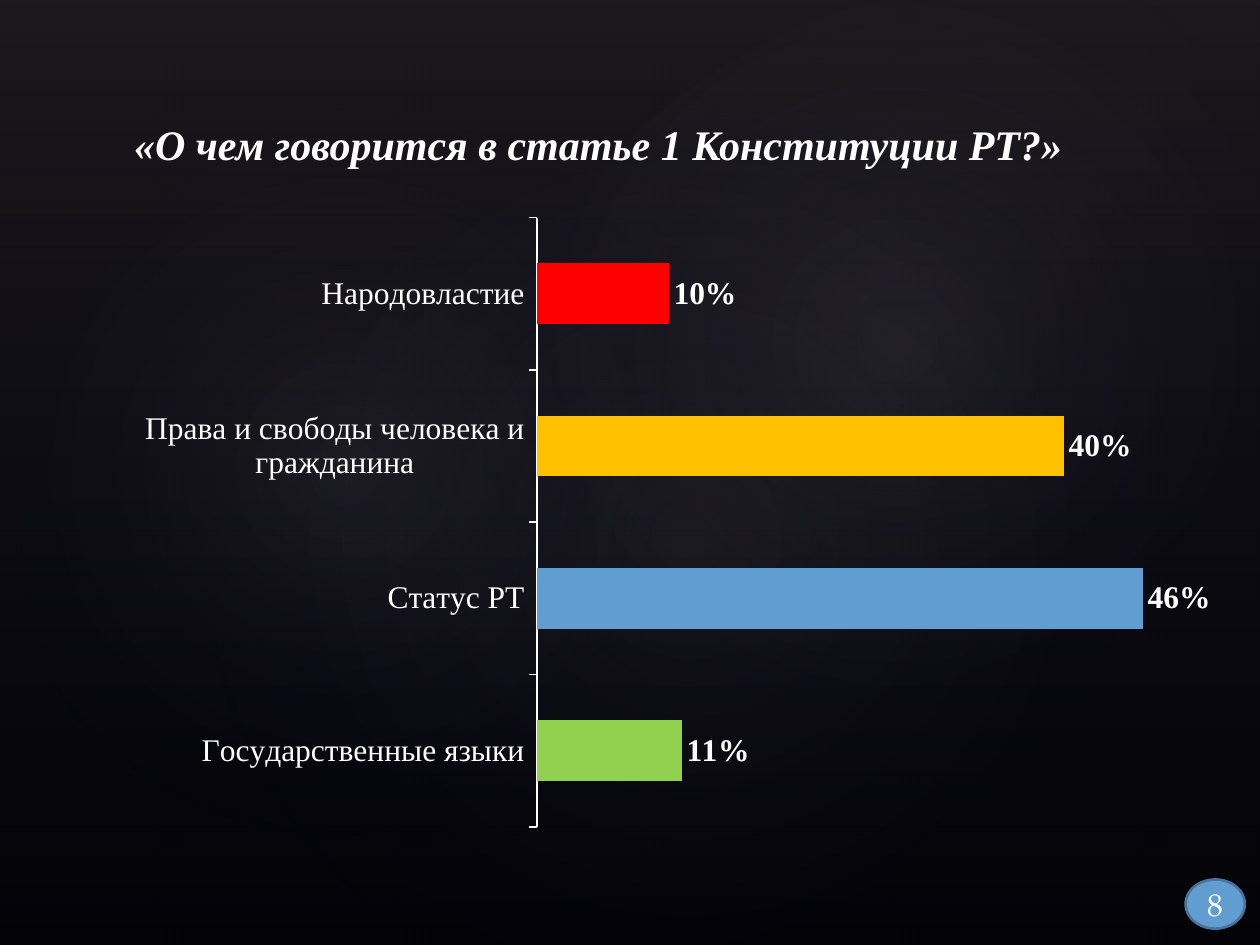
from lxml import etree
from pptx import Presentation
from pptx.chart.data import CategoryChartData
from pptx.dml.color import RGBColor
from pptx.enum.chart import XL_CHART_TYPE, XL_LABEL_POSITION, XL_TICK_MARK
from pptx.enum.shapes import MSO_SHAPE
from pptx.enum.text import MSO_ANCHOR, PP_ALIGN
from pptx.oxml import parse_xml
from pptx.oxml.ns import nsdecls, qn
from pptx.util import Inches, Pt

TITLE = "«О чем говорится в статье 1 Конституции РТ?» "
PAGE_NUMBER = "8"
ANSWERS = [
    ("Народовластие", 0.10, "FF0000"),
    ("Права и свободы человека и гражданина", 0.40, "FFC000"),
    ("Статус РТ", 0.46, "629DD1"),
    ("Государственные языки", 0.11, "92D050"),
]
GLOWS = [
    ((1.5, 1.14, 7.92, 6.24), 328.7, 7),
    ((-0.3, 1.28, 6.06, 4.9), 294.3, 8),
    ((3.58, 0.13, 7.09, 5.2), 328.7, 8),
]
PLOT_AREA = {"x": 0.4, "y": 0, "w": 0.587, "h": 0.953}
THEME = {
    "background": "000000", "text": "FFFFFF", "accent": "629DD1", "badge_line": "49749B",
    "veil_top": "504652", "veil_bottom": "242852", "glow": "C4BCC6",
    "heading_font": "Times New Roman", "body_font": "TeX Gyre Pagella",
    "title_size": 24, "label_size": 18, "chart_size": 10,
}


def rgb(name):
    return RGBColor.from_string(THEME[name])


def style_font(font, family, size, bold=False, italic=False):
    font.name = THEME[family]
    font.size = Pt(THEME[size])
    font.bold = bold
    font.italic = italic
    font.color.rgb = rgb("text")


def add_plain_shape(slide, kind, box):
    shape = slide.shapes.add_shape(kind, *map(Inches, box))
    shape.shadow.inherit = False
    return shape


def fill_gradient(shape, stops, direction):
    shape.line.fill.background()
    stop_xml = "".join(
        f'<a:gs pos="{position * 1000}"><a:srgbClr val="{THEME[color]}">'
        f'<a:alpha val="{alpha * 1000}"/></a:srgbClr></a:gs>'
        for position, color, alpha in stops
    )
    gradient = parse_xml(
        f'<a:gradFill {nsdecls("a")} rotWithShape="1"><a:gsLst>{stop_xml}</a:gsLst>{direction}</a:gradFill>'
    )
    shape.element.spPr.find(qn("a:prstGeom")).addnext(gradient)


def add_backdrop(slide):
    slide.background.fill.solid()
    slide.background.fill.fore_color.rgb = rgb("background")
    veil = add_plain_shape(slide, MSO_SHAPE.RECTANGLE, (0, 0, 10, 7.5))
    fill_gradient(veil, [(0, "veil_top", 36), (100, "veil_bottom", 10)], '<a:lin ang="5400000" scaled="0"/>')
    radial = '<a:path path="circle"><a:fillToRect l="50000" t="50000" r="50000" b="50000"/></a:path>'
    for box, angle, alpha in GLOWS:
        glow = add_plain_shape(slide, MSO_SHAPE.OVAL, box)
        glow.rotation = angle
        fill_gradient(glow, [(0, "glow", alpha), (58, "veil_bottom", 0)], radial)


def add_title(slide):
    title = slide.shapes.title
    title.left, title.top, title.width, title.height = map(Inches, (0.86, 0.55, 7.86, 0.84))
    title.text_frame.vertical_anchor = MSO_ANCHOR.BOTTOM
    heading = title.text_frame.paragraphs[0]
    heading.alignment = PP_ALIGN.CENTER
    run = heading.add_run()
    run.text = TITLE
    style_font(run.font, "heading_font", "title_size", bold=True, italic=True)


def place_plot(chart):
    plot_area = chart.element.chart.plotArea
    for old_layout in plot_area.findall(qn("c:layout")):
        plot_area.remove(old_layout)
    layout = etree.Element(qn("c:layout"))
    manual = etree.SubElement(layout, qn("c:manualLayout"))
    settings = {"layoutTarget": "inner", "xMode": "edge", "yMode": "edge", **PLOT_AREA}
    for tag, value in settings.items():
        etree.SubElement(manual, qn(f"c:{tag}")).set("val", str(value))
    plot_area.insert(0, layout)


def add_answer_chart(slide):
    answers = CategoryChartData(number_format="0%")
    answers.categories = [name for name, _, _ in ANSWERS]
    answers.add_series("Series 1", [share for _, share, _ in ANSWERS])
    chart = slide.shapes.add_chart(
        XL_CHART_TYPE.BAR_CLUSTERED, *map(Inches, (0.7, 1.72, 8.91, 5.08)), answers
    ).chart
    chart.has_legend = False
    chart.has_title = False
    style_font(chart.font, "body_font", "chart_size")
    place_plot(chart)

    topics = chart.category_axis
    topics.reverse_order = True
    topics.major_tick_mark = XL_TICK_MARK.OUTSIDE
    topics.has_major_gridlines = False
    topics.format.line.color.rgb = rgb("text")
    topics.format.line.width = Pt(1)
    style_font(topics.tick_labels.font, "heading_font", "label_size")

    shares = chart.value_axis
    shares.minimum_scale, shares.maximum_scale = 0, 0.5
    shares.has_major_gridlines = False
    shares.visible = False

    bars = chart.plots[0]
    bars.gap_width = 150
    bars.vary_by_categories = False
    bars.has_data_labels = True
    labels = bars.data_labels
    labels.show_value = True
    labels.number_format, labels.number_format_is_linked = "0%", False
    labels.position = XL_LABEL_POSITION.OUTSIDE_END
    style_font(labels.font, "heading_font", "label_size", bold=True)
    series = bars.series[0]
    series.format.fill.solid()
    series.format.fill.fore_color.rgb = rgb("accent")
    for index, (_, _, color) in enumerate(ANSWERS):
        bar_fill = series.points[index].format.fill
        bar_fill.solid()
        bar_fill.fore_color.rgb = RGBColor.from_string(color)


def add_page_badge(slide):
    badge = add_plain_shape(slide, MSO_SHAPE.OVAL, (9.41, 6.98, 0.47, 0.39))
    badge.fill.solid()
    badge.fill.fore_color.rgb = rgb("accent")
    badge.line.color.rgb = rgb("badge_line")
    badge.line.width = Pt(1.5)
    frame = badge.text_frame
    frame.margin_left = frame.margin_right = frame.margin_top = frame.margin_bottom = 0
    frame.vertical_anchor = MSO_ANCHOR.MIDDLE
    number = frame.paragraphs[0]
    number.alignment = PP_ALIGN.CENTER
    run = number.add_run()
    run.text = PAGE_NUMBER
    style_font(run.font, "body_font", "label_size")


def main():
    presentation = Presentation()
    presentation.slide_width, presentation.slide_height = Inches(10), Inches(7.5)
    slide = presentation.slides.add_slide(presentation.slide_layouts[5])
    add_backdrop(slide)
    add_title(slide)
    title_element = slide.shapes.title.element
    title_element.getparent().append(title_element)
    add_answer_chart(slide)
    add_page_badge(slide)
    presentation.save("out.pptx")


if __name__ == "__main__":
    main()
